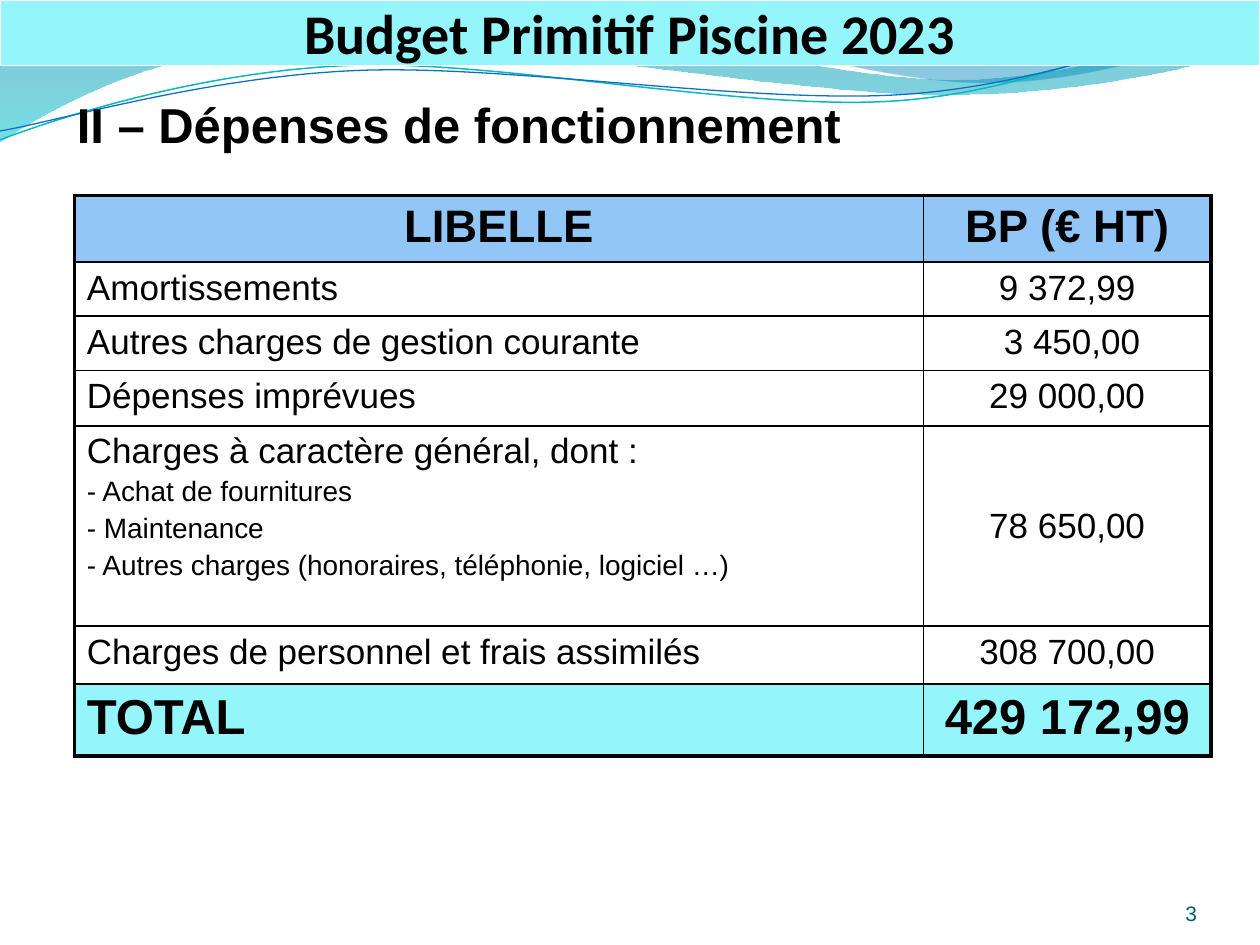
from pptx import Presentation
from pptx.dml.color import RGBColor
from pptx.enum.text import MSO_ANCHOR, MSO_AUTO_SIZE, PP_ALIGN
from pptx.oxml import parse_xml
from pptx.oxml.ns import nsdecls, qn
from pptx.oxml.xmlchemy import OxmlElement
from pptx.util import Inches, Pt

rgb = RGBColor.from_string


def add_wave(start, steps, close):
    """Freeform through steps: (x, y) is a line, six numbers are a Bezier curve."""
    ends = [(round(x * 100), round(y * 100)) for x, y in [start] + [st[-2:] for st in steps]]
    builder = s.shapes.build_freeform(*ends[0], scale=Inches(1) / 100)
    builder.add_line_segments(ends[1:], close=close)
    sp = builder.convert_to_shape()
    sp.shadow.inherit = False
    left, top = min(x for x, y in ends), min(y for x, y in ends)
    lines = list(sp._element.iter(qn("a:lnTo")))
    for line, step in zip(lines, steps):
        if len(step) == 2:
            continue
        curve = OxmlElement("a:cubicBezTo")
        for x, y in zip(step[::2], step[1::2]):
            pt = OxmlElement("a:pt")
            pt.set("x", str(round(x * 100) - left))
            pt.set("y", str(round(y * 100) - top))
            curve.append(pt)
        line.getparent().replace(line, curve)
    return sp


def style(p, size, color="000000", bold=False, font="Arial", align=PP_ALIGN.LEFT):
    p.alignment = align
    p.space_before = Pt(0)
    for r in p.runs:
        r.font.name, r.font.size, r.font.bold = font, Pt(size), bold
        r.font.color.rgb = rgb(color)


prs = Presentation()
prs.slide_width, prs.slide_height = Inches(10), Inches(7.5)
s = prs.slides.add_slide(prs.slide_layouts[1])
title, heading = s.placeholders[0], s.placeholders[1]

# Filled waves: start, steps, gradient stops (position, colour, opacity)
bands = [
    ((0, -0.01),
     [(4.4, -0.01), (4.76, 0.17, 6.64, 0.63, 7.58, 0.63),
      (8.53, 0.63, 9.58, 0.26, 10, 0.09), (10.01, 0.36),
      (9.83, 0.44, 8.7, 0.76, 7.46, 0.75), (6.22, 0.75, 3.82, 0.28, 2.57, 0.34),
      (1.29, 0.35, 0.46, 0.83, -0.01, 1.13)],
     [(0, "0074A1", 45), (1, "00C6CF", 55)]),
    ((4.79, -0.01),
     [(5.09, 0.11, 6.82, 0.62, 7.69, 0.65), (8.56, 0.69, 9.61, 0.32, 10, 0.21), (10, 0)],
     [(0, "00A1A9", 30), (0.8, "008BBF", 45)]),
]
for start, steps, stops in bands:
    sp = add_wave(start, steps, True)
    sp.line.fill.background()
    sp.fill.gradient()
    sp.fill.gradient_angle = 270
    for stop, (position, color, opacity) in zip(sp.fill.gradient_stops, stops):
        stop.position = position
        stop.color.rgb = rgb(color)
        alpha = OxmlElement("a:alpha")
        alpha.set("val", str(opacity * 1000))
        stop.color._xFill.find(qn("a:srgbClr")).append(alpha)

# Wave outlines
outlines = [
    ((0, 1.11), [(0.48, 0.93, 1.58, 0.57, 2.77, 0.52), (3.95, 0.47, 5.93, 0.89, 7.13, 0.8),
                 (8.33, 0.71, 9.38, 0.15, 9.98, -0.02)], "0AB8BF", 0.85),
    ((0, 1.04), [(0.47, 0.96, 1.64, 0.61, 2.83, 0.56), (4.03, 0.51, 5.97, 0.83, 7.17, 0.75),
                 (8.36, 0.67, 9.41, 0.21, 10, 0.06)], "0F6FC6", 0.75),
]
for start, steps, color, width in outlines:
    sp = add_wave(start, steps, False)
    sp.fill.background()
    sp.line.color.rgb = rgb(color)
    sp.line.width = Pt(width)

# Budget table: label lines, amount, row height, text size, fill
rows = [
    (["LIBELLE"], "BP (€ HT)", 0.53, 26, "91C6F7"),
    (["Amortissements"], "9 372,99", 0.43, 20, "FFFFFF"),
    (["Autres charges de gestion courante"], " 3 450,00", 0.43, 20, "FFFFFF"),
    (["Dépenses imprévues"], "29 000,00", 0.44, 20, "FFFFFF"),
    (["Charges à caractère général, dont :", "- Achat de fournitures", "- Maintenance",
      "- Autres charges (honoraires, téléphonie, logiciel …)"],
     "78 650,00", 1.59, 20, "FFFFFF"),
    (["Charges de personnel et frais assimilés"], "308 700,00", 0.46, 20, "FFFFFF"),
    (["TOTAL"], "429 172,99", 0.57, 28, "94F5FA"),
]
last = len(rows) - 1
table = s.shapes.add_table(len(rows), 2, Inches(0.59), Inches(1.55),
                           Inches(9.02), Inches(4.45)).table
table.columns[0].width, table.columns[1].width = Inches(6.74), Inches(2.28)
for i, (label, amount, height, size, fill) in enumerate(rows):
    table.rows[i].height = Inches(height)
    for j, lines in enumerate((label, [amount])):
        cell = table.cell(i, j)
        cell.text_frame.text = "\n".join(lines)
        centred = j == 1 or i == 0
        for k, p in enumerate(cell.text_frame.paragraphs):
            style(p, size if k == 0 else 16, bold=i in (0, last),
                  align=PP_ALIGN.CENTER if centred else PP_ALIGN.LEFT)
            if k:
                p.space_before = Pt(3.2)
        if j == 1 and len(label) > 1:
            cell.vertical_anchor = MSO_ANCHOR.MIDDLE
        # Thick outer frame, thin inner rules
        tcPr = cell._tc.get_or_add_tcPr()
        outer = {"L": j == 0, "R": j == 1, "T": i == 0, "B": i == last}
        for side, thick in outer.items():
            tcPr.append(parse_xml(
                f'<a:ln{side} {nsdecls("a")} w="{Pt(2.25 if thick else 1)}"><a:solidFill>'
                f'<a:srgbClr val="000000"/></a:solidFill></a:ln{side}>'))
        cell.fill.solid()
        cell.fill.fore_color.rgb = rgb(fill)

# Section heading
heading.left, heading.top, heading.width, heading.height = map(Inches, (0.51, 0.7, 9, 0.71))
tf = heading.text_frame
tf.text = "II – Dépenses de fonctionnement"
tf.auto_size = MSO_AUTO_SIZE.NONE
p = tf.paragraphs[0]
pPr = p._p.get_or_add_pPr()
pPr.set("marL", str(Inches(0.3)))
pPr.set("indent", str(Inches(-0.3)))
pPr.append(OxmlElement("a:buNone"))
style(p, 28, bold=True)

# Page number
tf = s.shapes.add_textbox(Inches(8.67), Inches(6.95), Inches(0.83), Inches(0.4)).text_frame
tf.word_wrap = True
tf.vertical_anchor = MSO_ANCHOR.BOTTOM
tf.margin_left = tf.margin_top = tf.margin_right = tf.margin_bottom = 0
tf.text = "3"
style(tf.paragraphs[0], 12, "045C75", align=PP_ALIGN.RIGHT)

# Title banner
title.left, title.top, title.width, title.height = map(Inches, (0, 0, 10, 0.52))
title.fill.solid()
title.fill.fore_color.rgb = rgb("94F5FA")
title.line.color.rgb = rgb("FFFFFF")
title.line.width = Pt(0.75)
tf = title.text_frame
tf.text = "Budget Primitif Piscine 2023"
tf.auto_size = MSO_AUTO_SIZE.NONE
tf.vertical_anchor = MSO_ANCHOR.BOTTOM
tf.margin_left = tf.margin_right = tf.margin_bottom = 0
tf.margin_top = Inches(0.05)
style(tf.paragraphs[0], 32, bold=True, font="Calibri", align=PP_ALIGN.CENTER)

# Heading and banner lie in front of the waves
for sp in (heading, title):
    s.shapes._spTree.append(sp._element)

prs.save("out.pptx")
